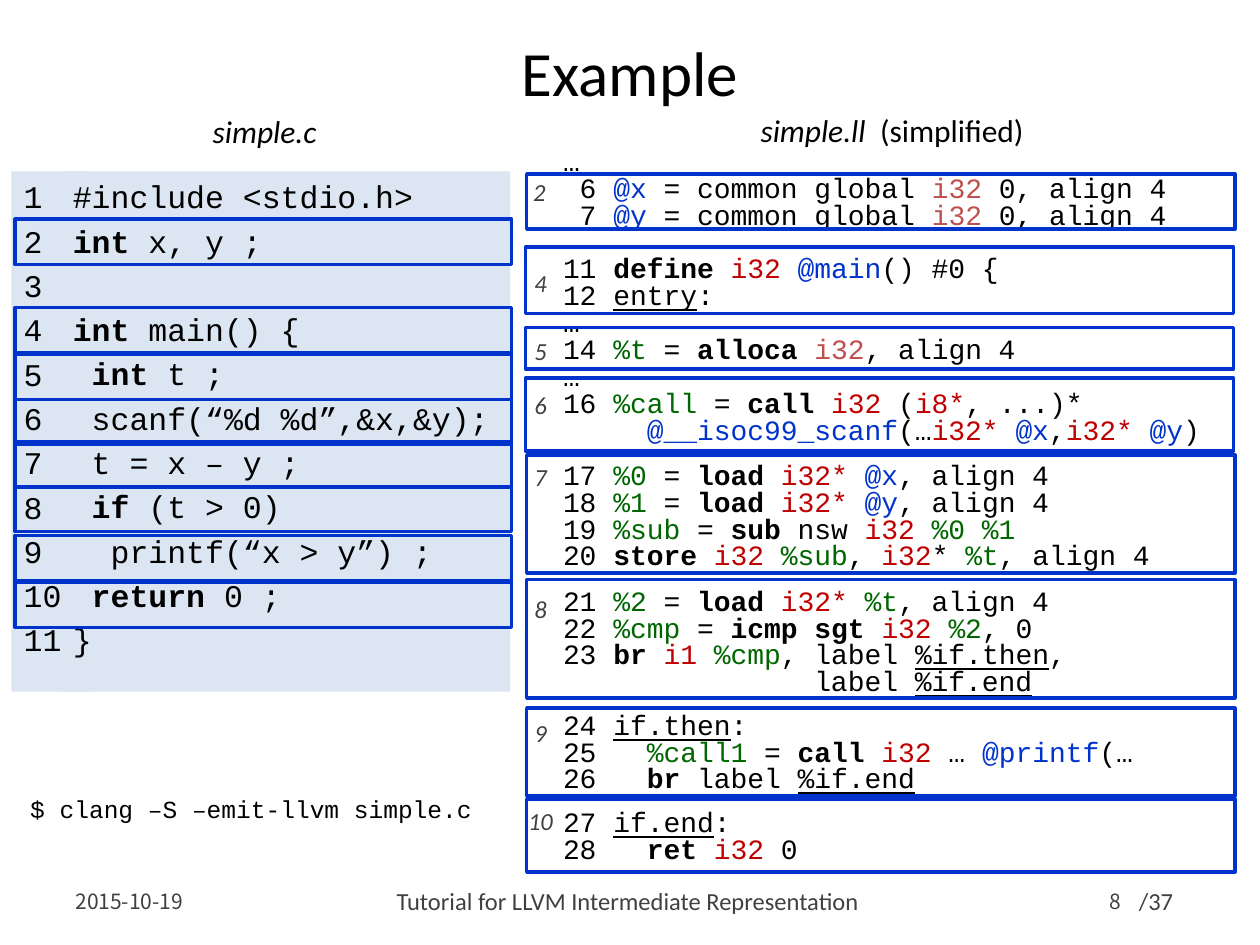
import pptx
import pptx.dml.color
import pptx.enum.shapes
import pptx.enum.text
import pptx.util

Inches, Pt = pptx.util.Inches, pptx.util.Pt
ALIGN, ANCHOR = pptx.enum.text.PP_ALIGN, pptx.enum.text.MSO_ANCHOR

COLORS = {"black": "000000", "gray": "404040", "white": "FFFFFF", "panel": "DCE6F2",
          "blue": "0033CC", "red": "C00000", "rose": "C0504D", "green": "006600"}

# Code markup: "|" separates pieces, and a piece may start with a style key and ":"
STYLES = {"b": {"bold": True}, "u": {"underline": True}, "i": {"italic": True},
          "n": {"color": "blue"}, "r": {"color": "red"},
          "p": {"color": "rose"}, "g": {"color": "green"}}

C_LINES = [
    "#include <stdio.h>",
    "b:int| x, y ;",
    "b:int| main() {",
    "b: int| t ;",
    " scanf(“%d %d”,&x,&y);",
    " t = x – y ;",
    " |b:if| (t > 0)",
    "  printf(“x > y”) ;",
    " |b:return| 0 ;",
    "}",
]
LLVM_LINES = [
    "…",
    " 6 |n:@x |= common global |p:i32| 0, align 4",
    " 7 |n:@y |= common global |p:i32| 0, align 4",
    "11 |b:define |r:i32 |n:@main|() #0 {",
    "12 |u:entry|:",
    "…",
    "14 |g:%t| = |b:alloca |p:i32|, align 4",
    "…",
    "16 |g:%call| = |b:call |r:i32| (|r:i8*|, ...)*",
    "     |n:@__isoc99_scanf|(…|r:i32* |n:@x|,|r:i32* |n:@y|)",
    "17 |g:%0| = |b:load |r:i32* |n:@x|, align 4",
    "18|g: %1| = |b:load |r:i32* |n:@y|, align 4",
    "19 |g:%sub| = |b:sub |nsw |r:i32|g: %0 %1",
    "20 |b:store |r:i32 |g:%sub|, |r:i32|* |g:%t|, align 4",
    "21 |g:%2| = |b:load |r:i32* |g:%t|, align 4",
    "22 |g:%cmp| = |b:icmp sgt |r:i32 |g:%2|, 0",
    "23 |b:br |r:i1 |g:%cmp|, label |u:%if.then|, ",
    "               label |u:%if.end",
    "24 |u:if.then|:",
    "25   |g:%call1| = |b:call |r:i32| … |n:@printf|(…",
    "26   |b:br| label |u:%if.end",
    "27 |u:if.end|:",
    "28   |b:ret |r:i32| 0",
]
# Points before the line with this index
C_GAPS = {2: 28.9}
LLVM_GAPS = {3: 15.3, 10: 10.5, 14: 10.5, 18: 9.4, 21: 9.4}

# C line number, top of its label, then left, top and height of its LLVM frame
BLOCKS = [
    (2, 1.42, 4.18, 1.38, 0.44),
    (4, 2.14, 4.17, 1.96, 0.53),
    (5, 2.68, 4.17, 2.60, 0.33),
    (6, 3.11, 4.17, 3.00, 0.58),
    (7, 3.68, 4.18, 3.61, 0.94),
    (8, 4.73, 4.18, 4.60, 0.94),
    (9, 5.71, 4.18, 5.62, 0.70),
    (10, 6.41, 4.18, 6.34, 0.58),
]
C_FRAME_TOPS = [1.74, 2.44, 2.81, 3.17, 3.51, 3.86, 4.25, 4.62]

presentation = pptx.Presentation()
presentation.slide_width, presentation.slide_height = Inches(10), Inches(7.5)
slide = presentation.slides.add_slide(presentation.slide_layouts[6])


def rgb(name):
    return pptx.dml.color.RGBColor.from_string(COLORS[name])


def add_text(lines, box, size=18, font="Calibri", color="black", align=ALIGN.LEFT,
             anchor=ANCHOR.TOP, fill=None, line_spacing=1.0, before=0, gaps=None,
             side_inset=0.1):
    """Add a text box of marked-up lines."""
    shape = slide.shapes.add_textbox(*map(Inches, box))
    if fill:
        shape.fill.solid()
        shape.fill.fore_color.rgb = rgb(fill)
    frame = shape.text_frame
    frame.word_wrap = True
    frame.vertical_anchor = anchor
    frame.margin_left = frame.margin_right = Inches(side_inset)
    for index, line in enumerate(lines):
        paragraph = frame.paragraphs[0] if index == 0 else frame.add_paragraph()
        paragraph.alignment = align
        paragraph.line_spacing = line_spacing
        paragraph.space_before = Pt((gaps or {}).get(index, before))
        for piece in line.split("|"):
            style = {}
            if piece[1:2] == ":" and piece[0] in STYLES:
                style, piece = STYLES[piece[0]], piece[2:]
            run = paragraph.add_run()
            run.text = piece
            run.font.name, run.font.size = font, Pt(size)
            run.font.bold = style.get("bold", False)
            run.font.italic = style.get("italic", False)
            run.font.underline = style.get("underline", False)
            run.font.color.rgb = rgb(style.get("color", color))


def add_frame(left, top, width, height):
    shape = slide.shapes.add_shape(pptx.enum.shapes.MSO_SHAPE.RECTANGLE,
                                   *map(Inches, (left, top, width, height)))
    shape.shadow.inherit = False
    shape.fill.background()
    shape.line.color.rgb = rgb("blue")
    shape.line.width = Pt(2)


# Title and footer
footer = {"color": "gray", "anchor": ANCHOR.MIDDLE}
add_text(["/37"], (8.94, 6.98, 0.83, 0.34), size=14, color="gray")
add_text(["Example"], (0.5, 0.29, 9, 0.55), size=36, align=ALIGN.CENTER,
         anchor=ANCHOR.MIDDLE)
add_text(["2015-10-19"], (0.5, 6.95, 1.11, 0.4), size=12, font="Noto Sans CJK KR", **footer)
add_text(["Tutorial for LLVM Intermediate Representation "], (1.61, 6.95, 6.79, 0.4),
         size=14, align=ALIGN.CENTER, **footer)
add_text(["8"], (8.54, 6.95, 0.46, 0.4), size=12, font="Noto Sans CJK KR",
         align=ALIGN.RIGHT, **footer)

# C source with line numbers, and the command
c_code = {"font": "Courier New", "fill": "panel", "before": 3.7}
add_text([str(number) for number in range(1, 12)], (0.09, 1.36, 0.63, 4.13), **c_code)
add_text(["$ clang –S –emit-llvm simple.c"], (0.09, 6.25, 3.81, 0.34), size=14,
         font="Courier New", align=ALIGN.CENTER, fill="white")
add_text(C_LINES, (0.48, 1.36, 3.57, 4.13), gaps=C_GAPS, **c_code)

# LLVM listing
add_text(LLVM_LINES, (4.37, 1.14, 5.35, 6), size=16, font="Courier New",
         line_spacing=0.8, gaps=LLVM_GAPS)

# File names
add_text(["i:simple.c"], (0.09, 0.84, 4.02, 0.4), align=ALIGN.CENTER)
add_text(["i:simple.ll  |(simplified)"], (5.07, 0.83, 4.02, 0.4), align=ALIGN.CENTER)

# Frames that pair C lines with LLVM blocks
for number, label_top, left, top, height in BLOCKS:
    add_text([f"i:{number}"], (4.13 if number == 2 else 4.14, label_top, 0.3, 0.21),
             size=14, color="gray", align=ALIGN.CENTER, anchor=ANCHOR.MIDDLE,
             fill="white", side_inset=0 if number == 10 else 0.1)
    add_frame(left, top, 5.62, height)
for top in C_FRAME_TOPS:
    add_frame(0.12, top, 3.94, 0.36)

presentation.save("out.pptx")
